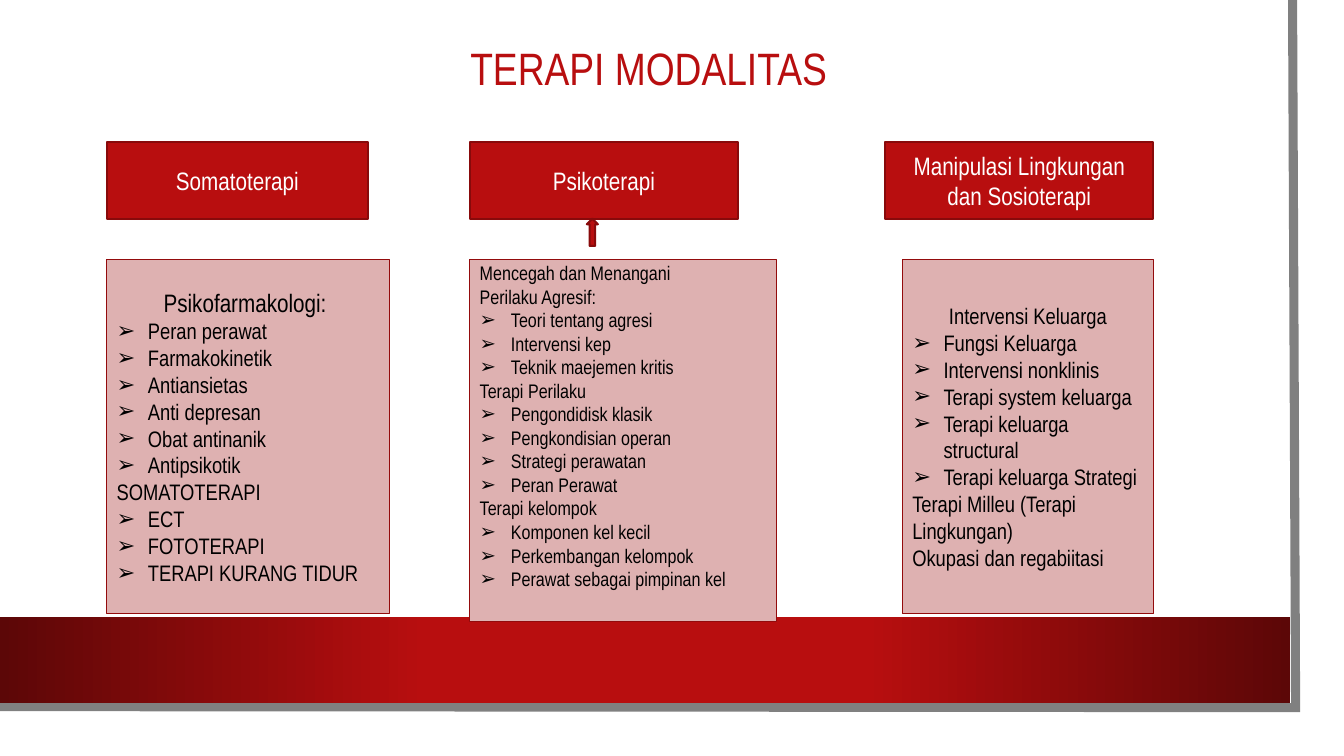
from lxml.etree import SubElement
from pptx import Presentation
from pptx.dml.color import RGBColor
from pptx.enum.shapes import MSO_SHAPE
from pptx.enum.text import MSO_ANCHOR, PP_ALIGN
from pptx.oxml import parse_xml
from pptx.oxml.ns import nsdecls, qn
from pptx.util import Inches, Pt

# Content: a line starting with "- " is a bullet, one with "^ " a centred heading
TITLE = "TERAPI MODALITAS"
THERAPIES = [
    {"name": "Somatoterapi", "head": (1.06, 2.59), "panel": (1.06, 2.8, 3.52),
     "size": 16, "heading_size": 18, "anchor": MSO_ANCHOR.MIDDLE,
     "lines": ["^ Psikofarmakologi: ", "- Peran perawat", "- Farmakokinetik",
               "- Antiansietas", "- Anti depresan", "- Obat antinanik",
               "- Antipsikotik", "SOMATOTERAPI", "- ECT", "- FOTOTERAPI",
               "- TERAPI KURANG TIDUR"]},
    {"name": "Psikoterapi", "head": (4.66, 2.66), "panel": (4.66, 3.04, 3.6),
     "size": 14, "heading_size": 14, "anchor": MSO_ANCHOR.TOP,
     "lines": ["Mencegah dan Menangani", "Perilaku Agresif:",
               "- Teori tentang agresi", "- Intervensi kep",
               "- Teknik maejemen kritis", "Terapi Perilaku",
               "- Pengondidisk klasik", "- Pengkondisian operan",
               "- Strategi perawatan", "- Peran Perawat", "Terapi kelompok",
               "- Komponen kel kecil", "- Perkembangan kelompok",
               "- Perawat sebagai pimpinan kel"]},
    {"name": "Manipulasi Lingkungan dan Sosioterapi", "head": (8.78, 2.66),
     "panel": (8.95, 2.49, 3.52),
     "size": 16, "heading_size": 16, "anchor": MSO_ANCHOR.MIDDLE,
     "lines": ["^ Intervensi Keluarga", "- Fungsi Keluarga",
               "- Intervensi nonklinis", "- Terapi system keluarga",
               "- Terapi keluarga structural", "- Terapi keluarga Strategi",
               "Terapi Milleu (Terapi Lingkungan)", "Okupasi dan regabiitasi"]},
]
THEME = {
    "font": "Arial Narrow", "bullet_font": "Arial",
    "title_size": 32.4, "head_size": 18,
    "red": "B80E0F", "dark": "5C0707", "head_line": "880A0B",
    "panel": "DEB1B1", "panel_line": "930B0C", "frame": "808080",
    "white": "FFFFFF", "black": "000000",
}
HEAD_TOP, HEAD_HEIGHT, PANEL_TOP = 1.41, 0.76, 2.57
BULLET_INDENT = Inches(0.31)
PANEL_MARGIN = Inches(0.02)

deck = Presentation()
deck.slide_width, deck.slide_height = Inches(13.33), Inches(7.5)
slide = deck.slides.add_slide(deck.slide_layouts[6])


def color(name):
    return RGBColor.from_string(THEME[name])


def add_block(kind, box, fill, line=None, width=0):
    block = slide.shapes.add_shape(kind, *map(Inches, box))
    block.shadow.inherit = False
    block.fill.solid()
    block.fill.fore_color.rgb = color(fill)
    if line:
        block.line.color.rgb = color(line)
        block.line.width = Pt(width)
    else:
        block.line.fill.background()
    return block


def style(paragraph, text, size, ink, align):
    paragraph.text = text
    paragraph.alignment = align
    paragraph.font.name = THEME["font"]
    paragraph.font.size = Pt(size)
    paragraph.font.color.rgb = color(ink)


def add_bullet(paragraph):
    properties = paragraph._p.get_or_add_pPr()
    properties.set("marL", str(BULLET_INDENT))
    properties.set("indent", str(-BULLET_INDENT))
    SubElement(properties, qn("a:buFont")).set("typeface", THEME["bullet_font"])
    SubElement(properties, qn("a:buChar")).set("char", "➢")


def fill_panel(frame, therapy):
    frame.word_wrap = True
    frame.vertical_anchor = therapy["anchor"]
    frame.margin_top = frame.margin_bottom = PANEL_MARGIN
    for number, entry in enumerate(therapy["lines"]):
        paragraph = frame.add_paragraph() if number else frame.paragraphs[0]
        size, align = therapy["size"], PP_ALIGN.LEFT
        if entry.startswith("- "):
            add_bullet(paragraph)
        elif entry.startswith("^ "):
            size, align = therapy["heading_size"], PP_ALIGN.CENTER
        style(paragraph, entry.removeprefix("- ").removeprefix("^ "),
              size, "black", align)


# Paper with its grey edge
add_block(MSO_SHAPE.RECTANGLE, (0, 0, 13.1, 7.27), "white")
edge_path = slide.shapes.build_freeform(Inches(12.82), 0)
edge_path.add_line_segments(
    [(Inches(12.85), Inches(7.02)), (Inches(-0.03), Inches(7.01))], close=False)
edge = edge_path.convert_to_shape()
edge.shadow.inherit = False
edge.fill.background()
edge.line.color.rgb = color("frame")
edge.line.width = Pt(6.5)
SubElement(edge._element.spPr.find(qn("a:ln")), qn("a:miter")).set("lim", "800000")

# Red band, darker towards both ends
band = add_block(MSO_SHAPE.RECTANGLE, (0, 6.12, 12.8, 0.85), "red")
stops = "".join(
    f'<a:gs pos="{percent * 1000}"><a:srgbClr val="{THEME[shade]}"/></a:gs>'
    for percent, shade in [(0, "dark"), (33, "red"), (67, "red"), (100, "dark")])
solid = band._element.spPr.find(qn("a:solidFill"))
solid.getparent().replace(solid, parse_xml(
    f'<a:gradFill {nsdecls("a")} rotWithShape="1"><a:gsLst>{stops}</a:gsLst>'
    '<a:lin ang="0" scaled="0"/></a:gradFill>'))

# Title
title = slide.shapes.add_textbox(*map(Inches, (0.75, 0.39, 11.37, 0.62))).text_frame
title.word_wrap = True
title.vertical_anchor = MSO_ANCHOR.MIDDLE
style(title.paragraphs[0], TITLE, THEME["title_size"], "red", PP_ALIGN.CENTER)
title.paragraphs[0].line_spacing = 0.9

# One heading and one panel for each therapy
for therapy in THERAPIES:
    left, width = therapy["head"]
    head = add_block(MSO_SHAPE.RECTANGLE, (left, HEAD_TOP, width, HEAD_HEIGHT),
                     "red", "head_line", 1.5).text_frame
    head.word_wrap = True
    head.vertical_anchor = MSO_ANCHOR.MIDDLE
    style(head.paragraphs[0], therapy["name"], THEME["head_size"], "white",
          PP_ALIGN.CENTER)
    left, width, height = therapy["panel"]
    panel = add_block(MSO_SHAPE.RECTANGLE, (left, PANEL_TOP, width, height),
                      "panel", "panel_line", 0.75)
    fill_panel(panel.text_frame, therapy)

# Arrow from the middle panel up to its heading
add_block(MSO_SHAPE.UP_ARROW, (5.82, HEAD_TOP + HEAD_HEIGHT, 0.11, 0.27),
          "red", "head_line", 1.5)

deck.save("out.pptx")
